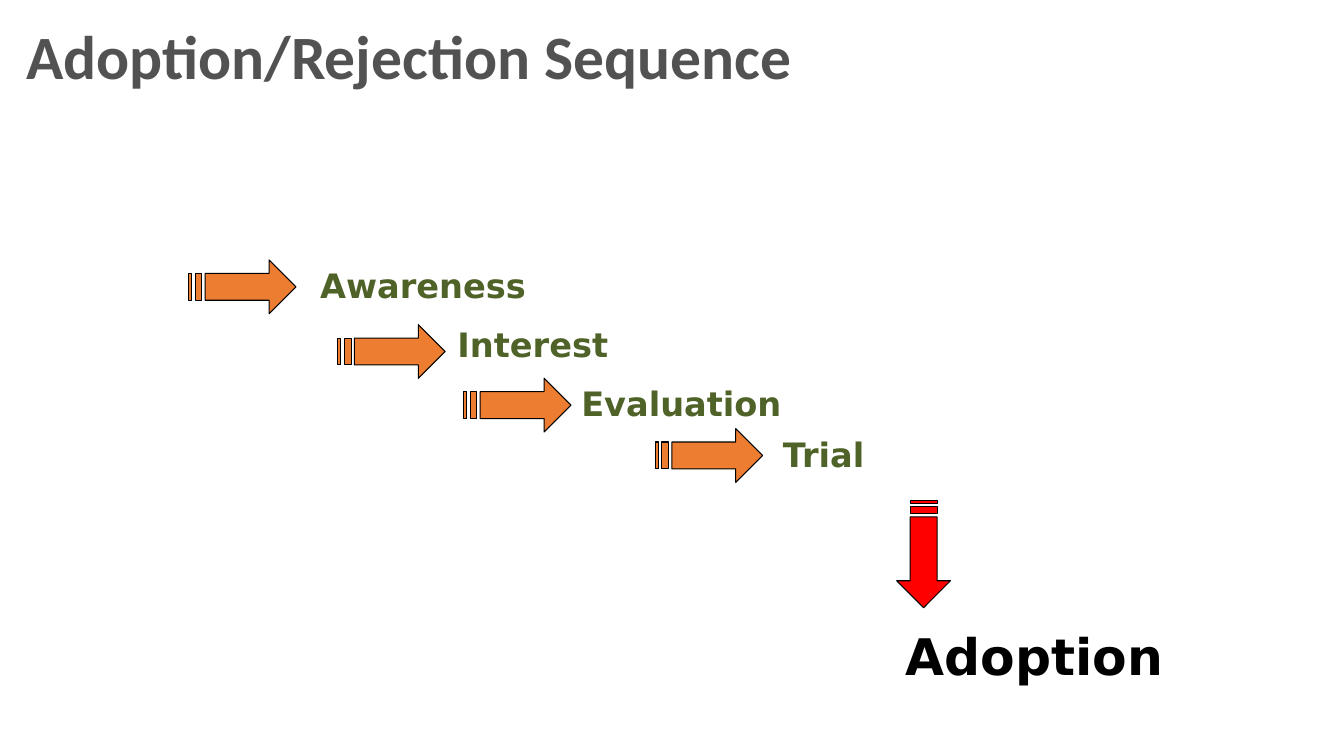
from pptx import Presentation
from pptx.dml.color import RGBColor
from pptx.enum.text import MSO_ANCHOR, MSO_AUTO_SIZE, PP_ALIGN
from pptx.util import Cm, Pt

LEFT = PP_ALIGN.LEFT
MIDDLE = MSO_ANCHOR.MIDDLE
NO_FIT = MSO_AUTO_SIZE.NONE
FIT_SHAPE = MSO_AUTO_SIZE.SHAPE_TO_FIT_TEXT

GREY = RGBColor(0x52, 0x52, 0x52)
GREEN = RGBColor(0x4F, 0x62, 0x28)
ORANGE = RGBColor(0xED, 0x7D, 0x31)
RED = RGBColor(0xFF, 0x00, 0x00)
BLACK = RGBColor(0x00, 0x00, 0x00)

ARROW_UNIT = Cm(2.71) / 32
ARROW_HEAD = [(24, 0), (24, 4), (5, 4), (5, 12), (24, 12), (24, 16), (32, 8)]
ARROW_STRIPES = [(2, 4), (0, 1)]

STAGES = [
    ("Awareness", 7.82, 6.55, 5.77, 4.75, 6.55),
    ("Interest", 11.28, 8.05, 4.45, 8.51, 8.18),
    ("Evaluation", 14.4, 9.53, 5.56, 11.68, 9.53),
    ("Trial", 19.48, 10.8, 2.67, 16.51, 10.8),
]


def style_font(p, name, size, color):
    p.font.name = name
    p.font.size = Pt(size)
    p.font.bold = True
    p.font.color.rgb = color


def add_title(s, text):
    title = s.shapes.title
    title.left, title.top = Cm(0.41), Cm(0)
    title.width, title.height = Cm(33), Cm(3)
    tf = title.text_frame
    tf.text = text
    tf.auto_size = NO_FIT
    tf.vertical_anchor = MIDDLE
    p = tf.paragraphs[0]
    p.alignment = LEFT
    p.line_spacing = 0.9
    style_font(p, "Calibri", 44, GREY)


def add_label(s, text, x, y, width, height, size, color):
    box = s.shapes.add_textbox(Cm(x), Cm(y), Cm(width), Cm(height))
    tf = box.text_frame
    tf.text = text
    tf.word_wrap = False
    tf.auto_size = FIT_SHAPE
    style_font(tf.paragraphs[0], "DejaVu Sans", size, color)


def add_striped_arrow(s, x, y, color, rotation=0):
    builder = s.shapes.build_freeform(*ARROW_HEAD[0], scale=ARROW_UNIT)
    builder.add_line_segments(ARROW_HEAD[1:])
    for start, end in ARROW_STRIPES:
        builder.move_to(start, 4)
        builder.add_line_segments([(start, 12), (end, 12), (end, 4)])
    sp = builder.convert_to_shape(Cm(x), Cm(y))
    sp.rotation = rotation
    sp.shadow.inherit = False
    sp.fill.solid()
    sp.fill.fore_color.rgb = color
    sp.line.color.rgb = BLACK
    sp.line.width = Pt(0.75)


def main():
    prs = Presentation()
    prs.slide_width, prs.slide_height = Cm(33.87), Cm(19.05)
    s = prs.slides.add_slide(prs.slide_layouts[5])
    add_title(s, "Adoption/Rejection Sequence")
    for text, x, y, width, arrow_x, arrow_y in STAGES:
        add_label(s, text, x, y, width, 1.27, 24, GREEN)
        add_striped_arrow(s, arrow_x, arrow_y, ORANGE)
    add_striped_arrow(s, 21.92, 13.28, RED, rotation=90)
    add_label(s, "Adoption", 22.58, 15.62, 7.01, 1.8, 36, BLACK)
    prs.save("out.pptx")


if __name__ == "__main__":
    main()
